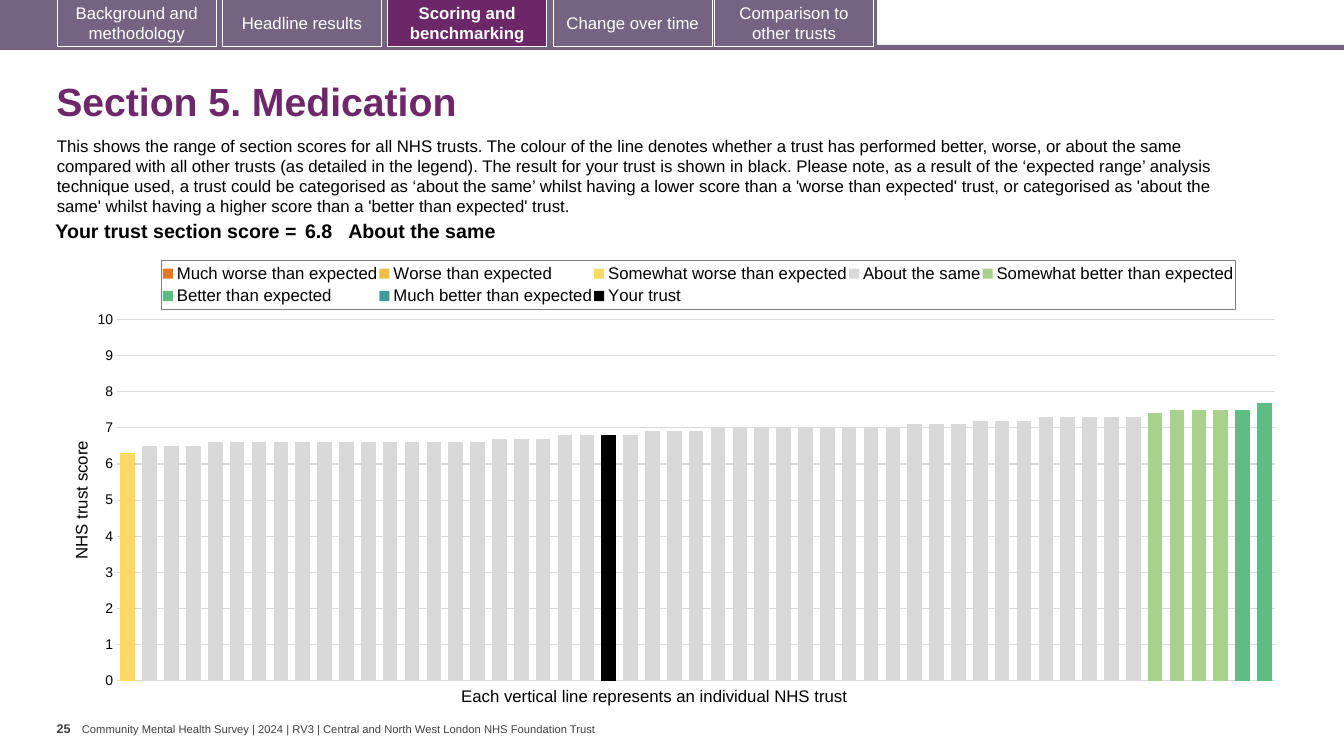
import copy
from dataclasses import dataclass
from typing import Any, Optional

import pptx
import pptx.chart.data
import pptx.dml.color
import pptx.enum.chart
import pptx.enum.shapes
import pptx.enum.text
import pptx.oxml
import pptx.util

Pt = pptx.util.Pt
RGBColor = pptx.dml.color.RGBColor
Align = pptx.enum.text.PP_ALIGN
Anchor = pptx.enum.text.MSO_ANCHOR
Box = tuple[float, float, float, float]

BLACK = RGBColor(0x00, 0x00, 0x00)
WHITE = RGBColor(0xFF, 0xFF, 0xFF)
FOOTER_GREY = RGBColor(0x40, 0x40, 0x40)
GRID_GREY = RGBColor(0xD9, 0xD9, 0xD9)
BAND = RGBColor(0x75, 0x63, 0x82)
ACTIVE = RGBColor(0x6B, 0x27, 0x68)
TITLE = RGBColor(0x6D, 0x27, 0x6A)
TRUST_COUNT = 53
CHART_BOX = (48.5, 177.8, 874.8, 319.7)
PLOT_BOX = (83.5, 228.2, 827.6, 258.3)
LEGEND_BOX = (115.1, 186, 767.6, 35)
NS = ('xmlns:c="http://schemas.openxmlformats.org/drawingml/2006/chart" '
      'xmlns:a="http://schemas.openxmlformats.org/drawingml/2006/main"')


@dataclass
class Label:
    text: str
    box: Box
    size: float
    color: RGBColor = BLACK
    bold: bool = False
    wrap: bool = True
    anchor: Any = Anchor.TOP
    side_inset: float = 7.2
    spacing: Optional[float] = None


@dataclass
class Band:
    """A legend entry; runs are (score, number of trusts) from trust index start."""
    name: str
    color: RGBColor
    start: int = 0
    runs: tuple[tuple[float, int], ...] = ()

    def values(self) -> list[Optional[float]]:
        padded = [None] * self.start + [v for v, count in self.runs for _ in range(count)]
        return padded + [None] * (TRUST_COUNT - len(padded))


ACTIVE_TAB = "Scoring and benchmarking"
TABS = {"Background and methodology": 41, "Headline results": 159, ACTIVE_TAB: 277,
        "Change over time": 395.3, "Comparison to other trusts": 510.5}

INTRO = (
    "This shows the range of section scores for all NHS trusts. The colour of the line "
    "denotes whether a trust has performed better, worse, or about the same compared with "
    "all other trusts (as detailed in the legend). The result for your trust is shown in "
    "black. Please note, as a result of the ‘expected range’ analysis technique used, a "
    "trust could be categorised as ‘about the same’ whilst having a lower score than a "
    "'worse than expected' trust, or categorised as 'about the same' whilst having a higher "
    "score than a 'better than expected' trust.")

LABELS = [
    Label("Section 5. Medication", (33.1, 48.2, 899.3, 51.8), 28, TITLE, bold=True,
          anchor=Anchor.MIDDLE, spacing=0.9),
    Label(INTRO, (33.5, 93.3, 873.4, 65.4), 12),
    Label("Each vertical line represents an individual NHS trust",
          (322.3, 486, 295.9, 21.6), 12, wrap=False),
    Label("25", (40.5, 511.2, 18, 28.8), 9, FOOTER_GREY, bold=True, wrap=False, side_inset=0),
    Label("Community Mental Health Survey | 2024 | RV3 | "
          "Central and North West London NHS Foundation Trust", (58.5, 515.8, 372.2, 9.4), 8,
          FOOTER_GREY, wrap=False, anchor=Anchor.MIDDLE, side_inset=0),
]

SCORE_CELLS = [("Your trust section score =", 189.4, 2.9, Align.RIGHT),
               ("6.8", 33.8, 2.9, Align.LEFT), ("About the same", 618.5, 0, Align.LEFT)]

BANDS = [
    Band("Much worse than expected", RGBColor(0xE8, 0x77, 0x22)),
    Band("Worse than expected", RGBColor(0xF1, 0xBE, 0x48)),
    Band("Somewhat worse than expected", RGBColor(0xFF, 0xD9, 0x66), 0, ((6.3, 1),)),
    Band("About the same", GRID_GREY, 1,
         ((6.5, 3), (6.6, 13), (6.7, 3), (6.8, 4), (6.9, 3), (7, 9), (7.1, 3), (7.2, 3), (7.3, 5))),
    Band("Somewhat better than expected", RGBColor(0xA9, 0xD1, 0x8E), 47, ((7.4, 1), (7.5, 3))),
    Band("Better than expected", RGBColor(0x5F, 0xBD, 0x83), 51, ((7.5, 1), (7.7, 1))),
    Band("Much better than expected", RGBColor(0x41, 0x99, 0x99)),
    Band("Your trust", BLACK, 22, ((6.8, 1),)),
]


def set_all(obj: Any, **values: Any) -> None:
    for name, value in values.items():
        setattr(obj, name, value)


def style_font(font: Any, size: float, color: RGBColor = BLACK, bold: bool = False) -> None:
    set_all(font, name="Arial", size=Pt(size), bold=bold)
    font.color.rgb = color


def write(tf: Any, text: str, size: float, color: RGBColor = BLACK, bold: bool = False,
          align: Any = Align.LEFT) -> Any:
    p = tf.paragraphs[0]
    p.alignment = align
    r = p.add_run()
    r.text = text
    style_font(r.font, size, color, bold)
    return p


def add_rect(s: Any, box: Box, fill: RGBColor) -> Any:
    sp = s.shapes.add_shape(pptx.enum.shapes.MSO_SHAPE.RECTANGLE, *map(Pt, box))
    sp.shadow.inherit = False
    sp.fill.solid()
    sp.fill.fore_color.rgb = fill
    sp.line.fill.background()
    return sp


def add_tab(s: Any, text: str, left: float) -> None:
    active = text == ACTIVE_TAB
    sp = add_rect(s, (left, -0.7, 113.4, 33.8), ACTIVE if active else BAND)
    sp.line.color.rgb = WHITE
    sp.line.width = Pt(0.75)
    sp.text_frame.vertical_anchor = Anchor.MIDDLE
    write(sp.text_frame, text, 12, WHITE, active, Align.CENTER)


def add_label(s: Any, label: Label) -> None:
    tf = s.shapes.add_textbox(*map(Pt, label.box)).text_frame
    inset = Pt(label.side_inset)
    set_all(tf, word_wrap=label.wrap, vertical_anchor=label.anchor,
            margin_left=inset, margin_right=inset)
    p = write(tf, label.text, label.size, label.color, label.bold)
    p.line_spacing = label.spacing


def add_score_table(s: Any) -> None:
    table = s.shapes.add_table(1, len(SCORE_CELLS), *map(Pt, (25.6, 154.8, 841.7, 22.3))).table
    set_all(table, first_row=False, horz_banding=False)
    for i, (text, width, inset, align) in enumerate(SCORE_CELLS):
        table.columns[i].width = Pt(width)
        cell = table.cell(0, i)
        cell.fill.background()
        set_all(cell, margin_left=Pt(inset), margin_right=Pt(inset),
                margin_top=Pt(2.9), margin_bottom=Pt(2.9))
        write(cell.text_frame, text, 14, bold=True, align=align)


def place(parent: Any, box: Box, index: int, target: str = "") -> None:
    """Give a chart part a manual layout from its box on the slide."""
    left, top, width, height = CHART_BOX
    parts = {"x": (box[0] - left) / width, "y": (box[1] - top) / height,
             "w": box[2] / width, "h": box[3] / height}
    sizes = "".join(f'<c:{name} val="{value:.4f}"/>' for name, value in parts.items())
    for old in parent.xpath("./c:layout"):
        parent.remove(old)
    parent.insert(index, pptx.oxml.parse_xml(
        f'<c:layout {NS}><c:manualLayout>{target}<c:xMode val="edge"/><c:yMode val="edge"/>'
        f'{sizes}</c:manualLayout></c:layout>'))


def move_last_series_right(area: Any) -> None:
    """Plot the last series against a second, unlabelled value axis."""
    bars, cat, val = (area.xpath(f"./c:{tag}")[0] for tag in ("barChart", "catAx", "valAx"))
    right_bars, right_cat, right_val = map(copy.deepcopy, (bars, cat, val))
    bars.remove(bars.xpath("./c:ser")[-1])
    for ser in right_bars.xpath("./c:ser")[:-1]:
        right_bars.remove(ser)
    ids = {cat.xpath("./c:axId")[0].get("val"): "5001", val.xpath("./c:axId")[0].get("val"): "5002"}
    for part in (right_bars, right_cat, right_val):
        for ref in part.xpath("./c:axId | ./c:crossAx"):
            ref.set("val", ids[ref.get("val")])
    for extra in right_val.xpath("./c:majorGridlines | ./c:title"):
        right_val.remove(extra)
    for tag, value in {"axPos": "r", "tickLblPos": "none", "majorTickMark": "out",
                       "crosses": "max"}.items():
        right_val.xpath(f"./c:{tag}")[0].set("val", value)
    bars.addnext(right_bars)
    val.addnext(right_val)
    right_val.addnext(right_cat)


def add_score_chart(s: Any) -> None:
    data = pptx.chart.data.CategoryChartData(number_format="0.0")
    data.categories = [str(n) for n in range(1, TRUST_COUNT + 1)]
    for band in BANDS:
        data.add_series(band.name, band.values())
    chart = s.shapes.add_chart(pptx.enum.chart.XL_CHART_TYPE.COLUMN_CLUSTERED,
                               *map(Pt, CHART_BOX), data).chart
    set_all(chart, has_title=False, has_legend=True)
    set_all(chart.font, name="Calibri", size=Pt(10))
    set_all(chart.plots[0], gap_width=50, overlap=100, vary_by_categories=False)
    for series, band in zip(chart.plots[0].series, BANDS):
        series.format.fill.solid()
        series.format.fill.fore_color.rgb = band.color
    chart.category_axis.visible = False
    axis = chart.value_axis
    set_all(axis, minimum_scale=0, maximum_scale=10, major_unit=1,
            major_tick_mark=pptx.enum.chart.XL_TICK_MARK.NONE)
    axis.format.line.fill.background()
    axis.major_gridlines.format.line.color.rgb = GRID_GREY
    axis.major_gridlines.format.line.width = Pt(0.75)
    set_all(axis.tick_labels, number_format="0", number_format_is_linked=False)
    style_font(axis.tick_labels.font, 10)
    write(axis.axis_title.text_frame, "NHS trust score", 12)
    set_all(chart.legend, position=pptx.enum.chart.XL_LEGEND_POSITION.TOP, include_in_layout=False)
    style_font(chart.legend.font, 12)
    legend, area = (chart.element.xpath(f".//c:{tag}")[0] for tag in ("legend", "plotArea"))
    place(legend, LEGEND_BOX, 1)
    legend.xpath("./c:txPr")[0].addprevious(pptx.oxml.parse_xml(
        f'<c:spPr {NS}><a:ln w="9525"><a:solidFill><a:srgbClr val="7F7F7F"/></a:solidFill>'
        '</a:ln></c:spPr>'))
    place(area, PLOT_BOX, 0, '<c:layoutTarget val="inner"/>')
    move_last_series_right(area)


def main() -> None:
    prs = pptx.Presentation()
    set_all(prs, slide_width=Pt(960), slide_height=Pt(540))
    s = prs.slides.add_slide(prs.slide_layouts[6])
    add_rect(s, (0, 32, 960, 3.6), BAND)
    add_rect(s, (0, 0, 626.4, 33.8), BAND)
    for text, left in TABS.items():
        add_tab(s, text, left)
    for label in LABELS:
        add_label(s, label)
    add_score_chart(s)
    add_score_table(s)
    prs.save("out.pptx")


if __name__ == "__main__":
    main()
